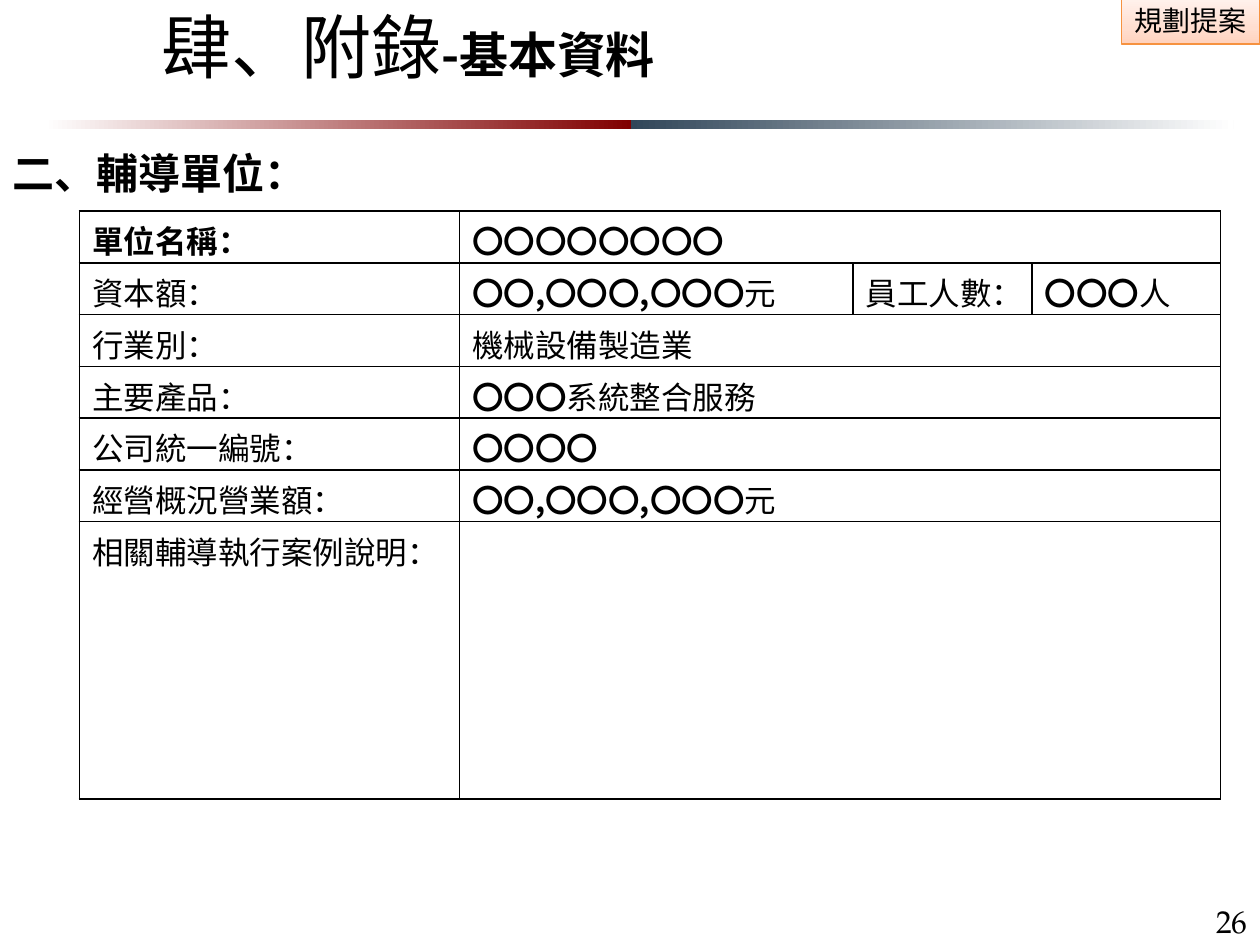
import dataclasses

import pptx
import pptx.dml.color
import pptx.enum.shapes
import pptx.enum.text
import pptx.oxml.ns
import pptx.util
from lxml import etree

Pt = pptx.util.Pt
qn = pptx.oxml.ns.qn
Align = pptx.enum.text.PP_ALIGN
Anchor = pptx.enum.text.MSO_ANCHOR


@dataclasses.dataclass(frozen=True)
class Theme:
    cjk: str = "Noto Sans CJK SC"
    serif: str = "TeX Gyre Pagella"
    ink: str = "000000"
    paper: str = "FFFFFF"
    maroon: str = "800000"
    navy: str = "314659"
    orange: str = "F69240"
    peach: tuple = ((0, "FFD2BD"), (35, "FFDED0"), (100, "FFF2ED"))
    title: int = 40
    subtitle: int = 28
    heading: int = 24
    body: int = 18
    tag: int = 16


class SlideBuilder:
    """Draw styled elements on the current slide."""

    def __init__(self, theme, slide):
        self.theme = theme
        self.slide = slide

    def color(self, value):
        return pptx.dml.color.RGBColor.from_string(value)

    def fill_frame(self, frame, pieces, anchor=Anchor.TOP, align=Align.LEFT, wrap=True):
        frame.auto_size = pptx.enum.text.MSO_AUTO_SIZE.NONE
        frame.word_wrap = wrap
        frame.vertical_anchor = anchor
        self.fill_paragraph(frame.paragraphs[0], pieces, align)

    def fill_paragraph(self, paragraph, pieces, align=Align.LEFT):
        paragraph.alignment = align
        for text, size, bold, *family in pieces:
            run = paragraph.add_run()
            run.text = text
            font = run.font
            font.size = Pt(size)
            font.bold = bold
            font.color.rgb = self.color(self.theme.ink)
            font.name = family[0] if family else self.theme.cjk
            etree.SubElement(run._r.rPr, qn("a:ea"), typeface=font.name)

    def title(self, box, pieces):
        title = self.slide.shapes.title
        title.left, title.top, title.width, title.height = map(Pt, box)
        self.fill_frame(title.text_frame, pieces, Anchor.MIDDLE)

    def text(self, box, pieces, **layout):
        label = self.slide.shapes.add_textbox(*map(Pt, box))
        self.fill_frame(label.text_frame, pieces, **layout)

    def gradient_bar(self, box, stops, angle=0, outline=None):
        bar = self.slide.shapes.add_shape(
            pptx.enum.shapes.MSO_SHAPE.RECTANGLE, *map(Pt, box))
        bar.shadow.inherit = False
        bar.fill.gradient()
        bar.fill.gradient_angle = angle
        stop_list = bar._element.spPr.find(".//" + qn("a:gsLst"))
        stop_list.clear()
        for position, value in stops:
            stop = etree.SubElement(stop_list, qn("a:gs"), pos=str(position * 1000))
            etree.SubElement(stop, qn("a:srgbClr"), val=value)
        if outline:
            bar.line.color.rgb = self.color(outline)
            bar.line.width = Pt(0.75)
        else:
            bar.line.fill.background()
        return bar

    def border(self, cell):
        properties = cell._tc.get_or_add_tcPr()
        for index, side in enumerate(("a:lnL", "a:lnR", "a:lnT", "a:lnB")):
            line = etree.Element(qn(side), w=str(Pt(1)))
            fill = etree.SubElement(line, qn("a:solidFill"))
            etree.SubElement(fill, qn("a:srgbClr"), val=self.theme.ink)
            properties.insert(index, line)

    def table(self, left, top, widths, heights, rows):
        frame = self.slide.shapes.add_table(
            len(rows), len(widths), Pt(left), Pt(top), Pt(sum(widths)), Pt(sum(heights)))
        table = frame.table
        table.first_row = table.horz_banding = False
        for column, width in zip(table.columns, widths):
            column.width = Pt(width)
        for row, height in zip(table.rows, heights):
            row.height = Pt(height)
        for index, entries in enumerate(rows):
            for cell in table.rows[index].cells:
                cell.fill.background()
                cell.margin_left = cell.margin_right = Pt(7.2)
                cell.margin_top, cell.margin_bottom = Pt(3.5), 0
                self.border(cell)
            for column, entry in enumerate(entries):
                pieces = [(text, self.theme.body, bold) for text, bold in entry]
                self.fill_paragraph(
                    table.cell(index, column).text_frame.paragraphs[0], pieces)
            if len(entries) < len(widths):
                table.cell(index, len(entries) - 1).merge(
                    table.cell(index, len(widths) - 1))


def main():
    deck = pptx.Presentation()
    deck.slide_width, deck.slide_height = Pt(720), Pt(540)
    theme = Theme()
    page = SlideBuilder(theme, deck.slides.add_slide(deck.slide_layouts[5]))

    tag = page.gradient_bar((640.8, -1.4, 79.2, 26.6), theme.peach, 90, theme.orange)
    page.fill_frame(tag.text_frame, [("規劃提案", theme.tag, False)],
                    Anchor.MIDDLE, Align.CENTER, False)
    page.gradient_bar((25.2, 68.4, 335.5, 5.6), ((0, theme.paper), (100, theme.maroon)))
    page.gradient_bar((360.7, 68.4, 344.2, 5.6), ((0, theme.navy), (100, theme.paper)))

    page.title((85, 2.5, 360, 46.8), [("肆、附錄", theme.title, False),
                                      ("-基本資料", theme.subtitle, True)])
    page.text((0, 81, 717, 133), [("二、輔導單位：", theme.heading, True)])
    page.text((658, 512, 62, 28), [("26", theme.body, False, theme.serif)],
              anchor=Anchor.MIDDLE, align=Align.RIGHT)

    amount = [("〇〇,〇〇〇,〇〇〇", True), ("元", False)]
    profile = [
        [[("單位名稱：", True)], [("〇〇〇〇〇〇〇〇", True)]],
        [[("資本額：", False)], amount,
         [("員工人數：", False)], [("〇〇〇", True), ("人", False)]],
        [[("行業別：", False)], [("機械設備製造業", False)]],
        [[("主要產品：", False)], [("〇〇〇", True), ("系統整合服務", False)]],
        [[("公司統一編號：", False)], [("〇〇〇〇", True)]],
        [[("經營概況營業額：", False)], amount],
        [[("相關輔導執行案例說明：", False)], []],
    ]
    page.table(45.4, 120.7, (217.2, 224.9, 102.2, 107.8),
               [29.2] * 6 + [158.6], profile)
    deck.save("out.pptx")


if __name__ == "__main__":
    main()
